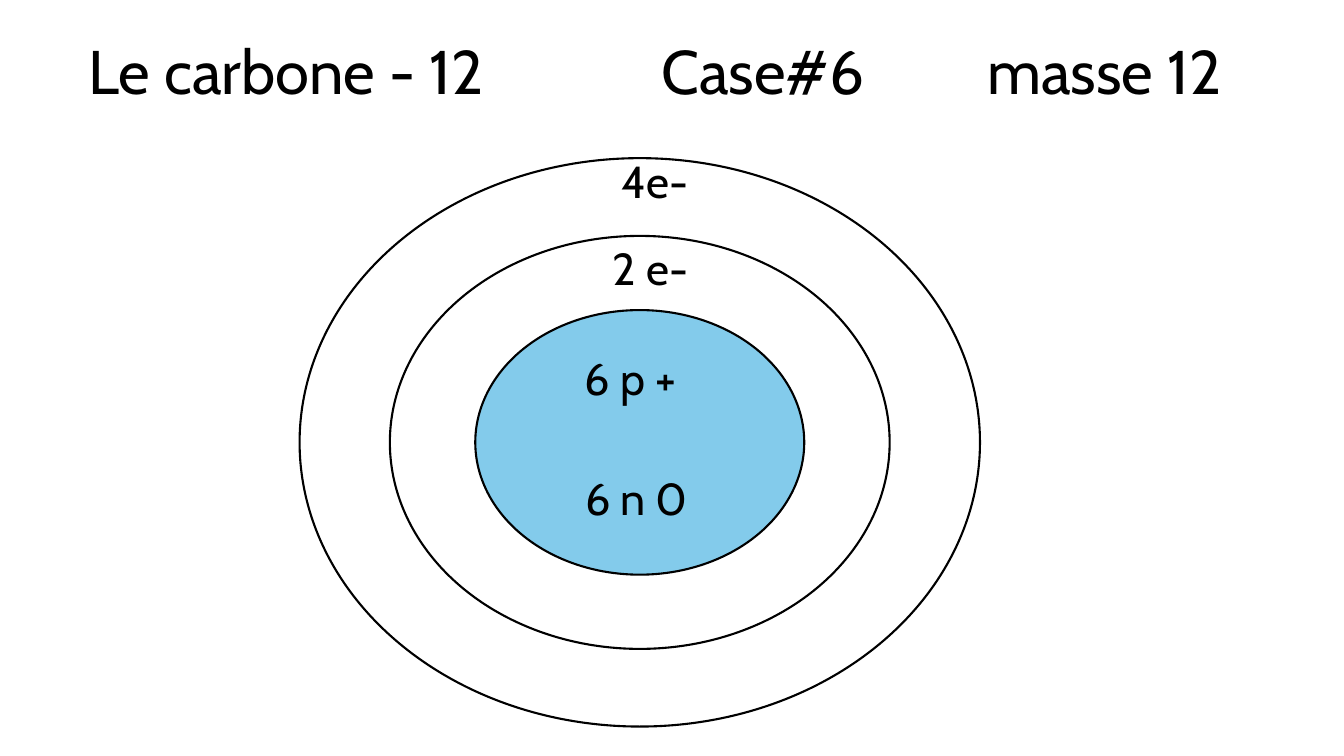
"""Build a slide with the shell diagram of a carbon-12 atom."""
from lxml import etree
from pptx import Presentation
from pptx.dml.color import RGBColor
from pptx.enum import shapes, text
from pptx.oxml import ns
from pptx.util import Pt


def color(value):
    return RGBColor.from_string(value)


def style(p, size):
    p.alignment = text.PP_ALIGN.LEFT
    p.font.name = "Cabin"
    p.font.size = Pt(size)
    p.font.color.rgb = color("000000")


prs = Presentation()
prs.slide_width, prs.slide_height = Pt(960), Pt(540)
s = prs.slides.add_slide(prs.slide_layouts[5])

title = s.shapes.title
title.left, title.top, title.width, title.height = Pt(56), Pt(1), Pt(828), Pt(104)
tf = title.text_frame
tf.word_wrap = True
tf.vertical_anchor = text.MSO_ANCHOR.MIDDLE
p = tf.paragraphs[0]
p.text = "Le carbone - 12\tCase#6\tmasse 12"
tabs = etree.SubElement(p._p.get_or_add_pPr(), ns.qn("a:tabLst"))
for pos in (409, 642):
    etree.SubElement(tabs, ns.qn("a:tab"), pos=str(Pt(pos)), algn="l")
p.line_spacing = 0.9
style(p, 44)

cx, cy = 457, 316
for w, h, fill in ((486, 406, "FFFFFF"), (357, 295, "FFFFFF"), (235, 189, "83CBEB")):
    sp = s.shapes.add_shape(shapes.MSO_SHAPE.OVAL, Pt(cx - w / 2), Pt(cy - h / 2), Pt(w), Pt(h))
    sp.shadow.inherit = False
    sp.fill.solid()
    sp.fill.fore_color.rgb = color(fill)
    sp.line.color.rgb = color("000000")
    sp.line.width = Pt(1.5)

labels = (
    ("6 p +", 410.5, 247, 94),
    ("2 e-", 430.5, 168.5, 99),
    ("4e-", 436.5, 106, 68),
    ("6 n 0", 411, 332.5, 119),
)
for label, x, y, w in labels:
    tf = s.shapes.add_textbox(Pt(x), Pt(y), Pt(w), Pt(46)).text_frame
    tf.word_wrap = True
    tf.auto_size = text.MSO_AUTO_SIZE.SHAPE_TO_FIT_TEXT
    p = tf.paragraphs[0]
    p.text = label
    style(p, 32)

prs.save("out.pptx")
